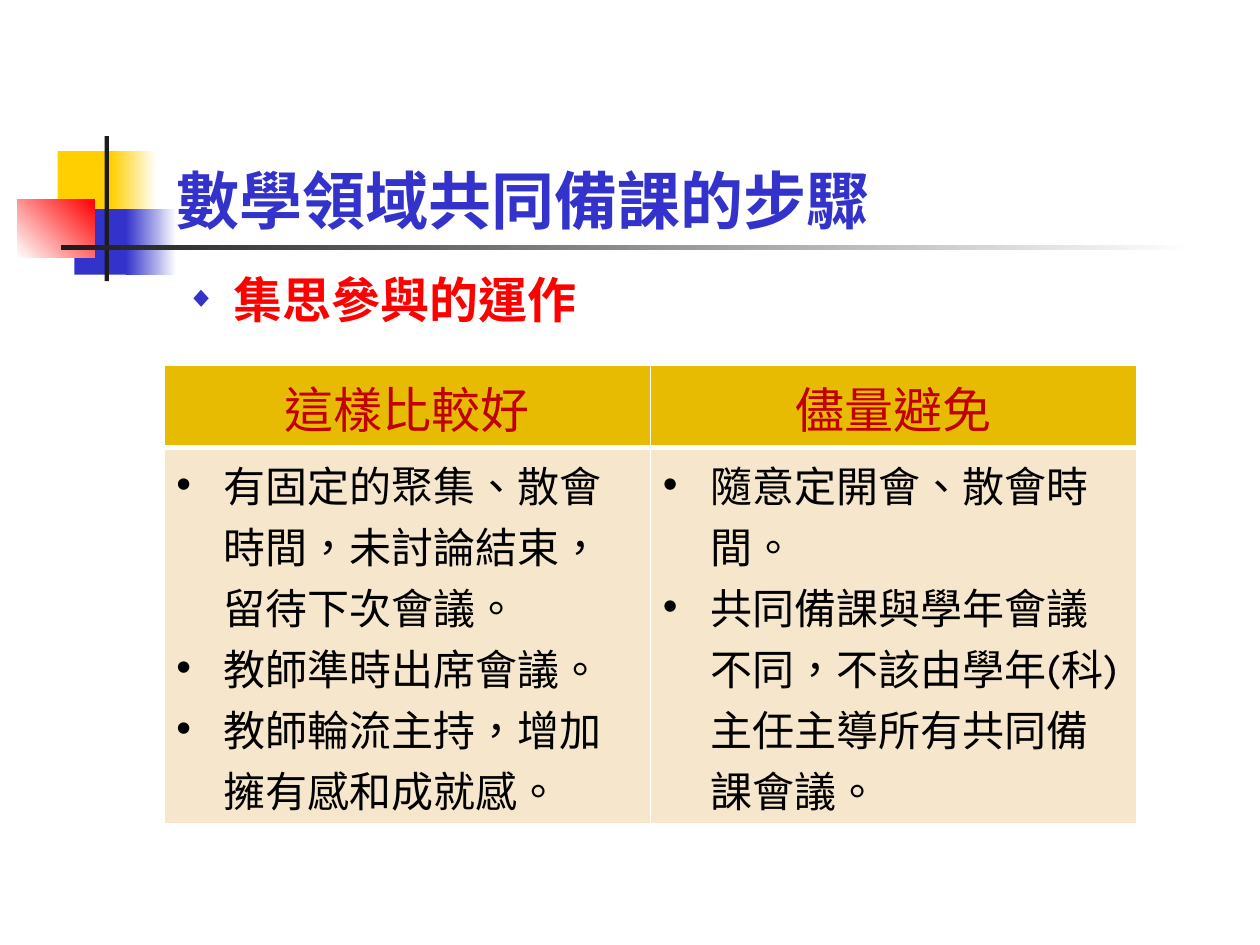
"""Build a slide on the steps of shared lesson planning in mathematics."""
from typing import NamedTuple

from lxml.etree import SubElement as Sub
from pptx import Presentation as Deck
from pptx.dml.color import RGBColor as Rgb
from pptx.enum.lang import MSO_LANGUAGE_ID as Lang
from pptx.enum.shapes import MSO_SHAPE as Kind
from pptx.enum.text import MSO_ANCHOR as Anchor, MSO_AUTO_SIZE as Auto, PP_ALIGN as Align
from pptx.oxml.ns import qn
from pptx.util import Pt

HEX = {
    "gold": "FFCF01", "blue": "3333CC", "red": "FF0000", "dark": "1C1C1C",
    "white": "FFFFFF", "black": "000000", "wine": "C00000",
    "head": "E7BB01", "body": "F6E7CC",
}
LATIN, ASIAN = "Karla", "Noto Sans CJK SC"
INDENT = 27


class Block(NamedTuple):
    left: float
    top: float
    width: float
    height: float
    start: str
    end: str = ""
    angle: int = 0


class Style(NamedTuple):
    size: int
    color: str
    bold: bool = False
    name: str = LATIN


class Column(NamedTuple):
    head: str
    points: list[str]


BLOCKS = [
    Block(33, 86.4, 34.6, 37.4, "gold"),
    Block(63.4, 86.4, 26, 37.4, "gold", "white"),
    Block(42.5, 119.5, 33.1, 37.4, "blue"),
    Block(72, 119.5, 28.8, 37.4, "blue", "white"),
    Block(10, 113.8, 44, 33.1, "white", "red", 45),
    Block(59.8, 77.8, 2.4, 82.8, "dark"),
    Block(34.6, 140.2, 648, 2.4, "dark", "white"),
]
COLUMNS = [
    Column("這樣比較好", [
        "有固定的聚集、散會時間，未討論結束，留待下次會議。",
        "教師準時出席會議。",
        "教師輪流主持，增加擁有感和成就感。",
    ]),
    Column("儘量避免", [
        "隨意定開會、散會時間。",
        "共同備課與學年會議不同，不該由學年(科)主任主導所有共同備課會議。",
    ]),
]


def ink(key: str) -> Rgb:
    return Rgb.from_string(HEX[key])


def apply(item, values: dict) -> None:
    for key, value in values.items():
        setattr(item, key, value)


def place(item, left: float, top: float, width: float, height: float) -> None:
    apply(item, {"left": Pt(left), "top": Pt(top), "width": Pt(width), "height": Pt(height)})


def draw(slide, block: Block) -> None:
    shape = slide.shapes.add_shape(Kind.RECTANGLE, *map(Pt, block[:4]))
    shape.shadow.inherit = False
    shape.line.fill.background()
    if block.end:
        shape.fill.gradient()
        shape.fill.gradient_angle = block.angle
        for stop, key in zip(shape.fill.gradient_stops, (block.start, block.end)):
            stop.color.rgb = ink(key)
    else:
        shape.fill.solid()
        shape.fill.fore_color.rgb = ink(block.start)


def write(para, text: str, style: Style, align=Align.LEFT) -> None:
    para.alignment = align
    run = para.add_run()
    run.text = text
    apply(run.font, {"size": Pt(style.size), "bold": style.bold, "name": style.name,
                     "language_id": Lang.TRADITIONAL_CHINESE})
    run.font.color.rgb = ink(style.color)
    Sub(run.font._element, qn("a:ea"), typeface=ASIAN)


def bullet(para, char: str, color: str, scale: int) -> None:
    props = para._p.get_or_add_pPr()
    apply_xml = {"marL": Pt(INDENT), "indent": Pt(-INDENT)}
    for key, value in apply_xml.items():
        props.set(key, str(value))
    tint = Sub(props, qn("a:buClr"))
    Sub(tint, qn("a:srgbClr"), val=HEX[color])
    Sub(props, qn("a:buSzPct"), val=str(scale * 1000))
    Sub(props, qn("a:buFont"), typeface="Arial")
    Sub(props, qn("a:buChar"), char=char)


def dress(cell, fill: str, edges: dict[str, int]) -> None:
    props = cell._tc.get_or_add_tcPr()
    for side in "LRTB":
        line = Sub(props, qn(f"a:ln{side}"), w=str(Pt(edges.get(side, 1))))
        Sub(Sub(line, qn("a:solidFill")), qn("a:srgbClr"), val=HEX["white"])
    cell.fill.solid()
    cell.fill.fore_color.rgb = ink(fill)


def add_title(slide, text: str) -> None:
    title = slide.shapes.title
    place(title, 93.6, 49, 610.6, 90)
    apply(title.text_frame, {"vertical_anchor": Anchor.BOTTOM, "word_wrap": True,
                             "auto_size": Auto.NONE})
    write(title.text_frame.paragraphs[0], text, Style(36, "blue", True))


def add_topic(slide, text: str) -> None:
    frame = slide.shapes.add_textbox(*map(Pt, (99.4, 157, 573, 33.8))).text_frame
    frame.word_wrap = True
    para = frame.paragraphs[0]
    write(para, text, Style(28, "red", True, ASIAN))
    apply(para, {"line_spacing": 0.8, "space_before": Pt(5.6)})
    bullet(para, "◆", "blue", 60)


def add_grid(slide, columns: list[Column]) -> None:
    rows = (47, 215)
    grid = slide.shapes.add_table(2, len(columns), *map(Pt, (93.6, 208.8, 556, sum(rows)))).table
    for row, height in zip(grid.rows, rows):
        row.height = Pt(height)
    for index, column in enumerate(columns):
        head, body = (grid.cell(row, index) for row in range(2))
        dress(head, "head", {"B": 3})
        head.vertical_anchor = Anchor.MIDDLE
        write(head.text_frame.paragraphs[0], column.head, Style(28, "wine"), Align.CENTER)
        dress(body, "body", {"T": 3})
        frame = body.text_frame
        for order, text in enumerate(column.points):
            para = frame.add_paragraph() if order else frame.paragraphs[0]
            write(para, text, Style(24, "black"))
            bullet(para, "•", "black", 100)


def main() -> None:
    deck = Deck()
    apply(deck, {"slide_width": Pt(720), "slide_height": Pt(540)})
    slide = deck.slides.add_slide(deck.slide_layouts[5])
    for block in BLOCKS:
        draw(slide, block)
    add_title(slide, "數學領域共同備課的步驟")
    add_topic(slide, "集思參與的運作")
    add_grid(slide, COLUMNS)
    deck.save("out.pptx")


if __name__ == "__main__":
    main()
